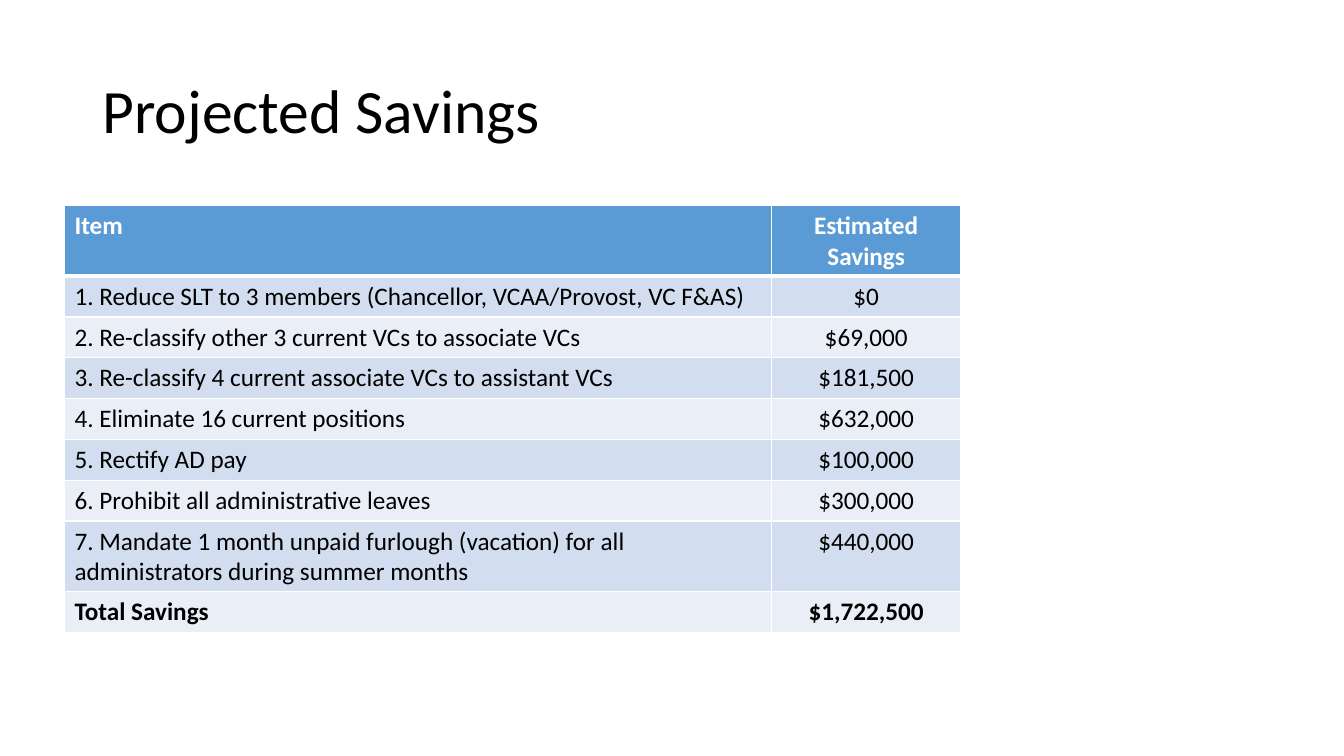
from lxml import etree
from pptx import Presentation
from pptx.dml.color import RGBColor
from pptx.enum.text import MSO_ANCHOR, PP_ALIGN
from pptx.oxml.ns import qn
from pptx.util import Inches, Pt

LEFT, CENTER = PP_ALIGN.LEFT, PP_ALIGN.CENTER
MIDDLE = MSO_ANCHOR.MIDDLE

BLACK = RGBColor(0x00, 0x00, 0x00)
WHITE = RGBColor(0xFF, 0xFF, 0xFF)
HEADER_BLUE = RGBColor(0x5B, 0x9B, 0xD5)
BANDS = (RGBColor(0xD2, 0xDE, 0xEF), RGBColor(0xEA, 0xEF, 0xF7))

RULE, HEADER_RULE = Pt(1), Pt(3)

SAVINGS = [
    ("Item", "Estimated Savings"),
    ("1. Reduce SLT to 3 members (Chancellor, VCAA/Provost, VC F&AS)", "$0"),
    ("2. Re-classify other 3 current VCs to associate VCs", "$69,000"),
    ("3. Re-classify 4 current associate VCs to assistant VCs", "$181,500"),
    ("4. Eliminate 16 current positions", "$632,000"),
    ("5. Rectify AD pay", "$100,000"),
    ("6. Prohibit all administrative leaves", "$300,000"),
    ("7. Mandate 1 month unpaid furlough (vacation) for all "
     "administrators during summer months", "$440,000"),
    ("Total Savings", "$1,722,500"),
]


class SavingsSlide:
    """Holds the style and the slide; lengths are percentages of its size."""

    font_name = "Calibri"

    def __init__(self, deck):
        self.width, self.height = deck.slide_width, deck.slide_height
        self.shapes = deck.slides.add_slide(deck.slide_layouts[6]).shapes

    def across(self, percent):
        return round(self.width * percent / 100)

    def down(self, percent):
        return round(self.height * percent / 100)

    def add_wording(self, paragraph, wording, color, **font_format):
        run = paragraph.add_run()
        run.text = wording
        for name, value in {"name": self.font_name, **font_format}.items():
            setattr(run.font, name, value)
        run.font.color.rgb = color

    def title(self, wording, left, top, width, height):
        box = self.shapes.add_textbox(self.across(left), self.down(top),
                                      self.across(width), self.down(height))
        frame = box.text_frame
        for name, value in {"word_wrap": True, "vertical_anchor": MIDDLE}.items():
            setattr(frame, name, value)
        heading = frame.paragraphs[0]
        heading.line_spacing = 0.9
        self.add_wording(heading, wording, BLACK, size=Pt(44))

    def table(self, rows, left, top, column_widths, row_height):
        widths = [self.across(share) for share in column_widths]
        height = self.down(row_height)
        table = self.shapes.add_table(
            len(rows), len(widths), self.across(left), self.down(top),
            sum(widths), height * len(rows)).table
        for column, width in zip(table.columns, widths):
            column.width = width
        for row_index, entries in enumerate(rows):
            table.rows[row_index].height = height
            is_header = row_index == 0
            is_total = row_index == len(rows) - 1
            fill = HEADER_BLUE if is_header else BANDS[(row_index - 1) % 2]
            for column_index, wording in enumerate(entries):
                cell = table.cell(row_index, column_index)
                self.borders(cell, {
                    "a:lnL": RULE,
                    "a:lnR": RULE,
                    "a:lnT": HEADER_RULE if row_index == 1 else RULE,
                    "a:lnB": HEADER_RULE if is_header else RULE,
                })
                cell.fill.solid()
                cell.fill.fore_color.rgb = fill
                paragraph = cell.text_frame.paragraphs[0]
                paragraph.alignment = CENTER if column_index else LEFT
                self.add_wording(paragraph, wording,
                                 WHITE if is_header else BLACK,
                                 size=Pt(18), bold=is_header or is_total)

    def borders(self, cell, edges):
        properties = cell._tc.get_or_add_tcPr()
        for tag, weight in edges.items():
            edge = etree.SubElement(properties, qn(tag), w=str(int(weight)))
            paint = etree.SubElement(edge, qn("a:solidFill"))
            etree.SubElement(paint, qn("a:srgbClr"), val=str(WHITE))


def main():
    deck = Presentation()
    deck.slide_width, deck.slide_height = Inches(13.33), Inches(7.5)
    slide = SavingsSlide(deck)
    slide.title("Projected Savings", left=6.9, top=5.33, width=86.25, height=19.33)
    slide.table(SAVINGS, left=4.8, top=27.2, column_widths=(52.6, 14.1),
                row_height=5.4)
    deck.save("out.pptx")


if __name__ == "__main__":
    main()
